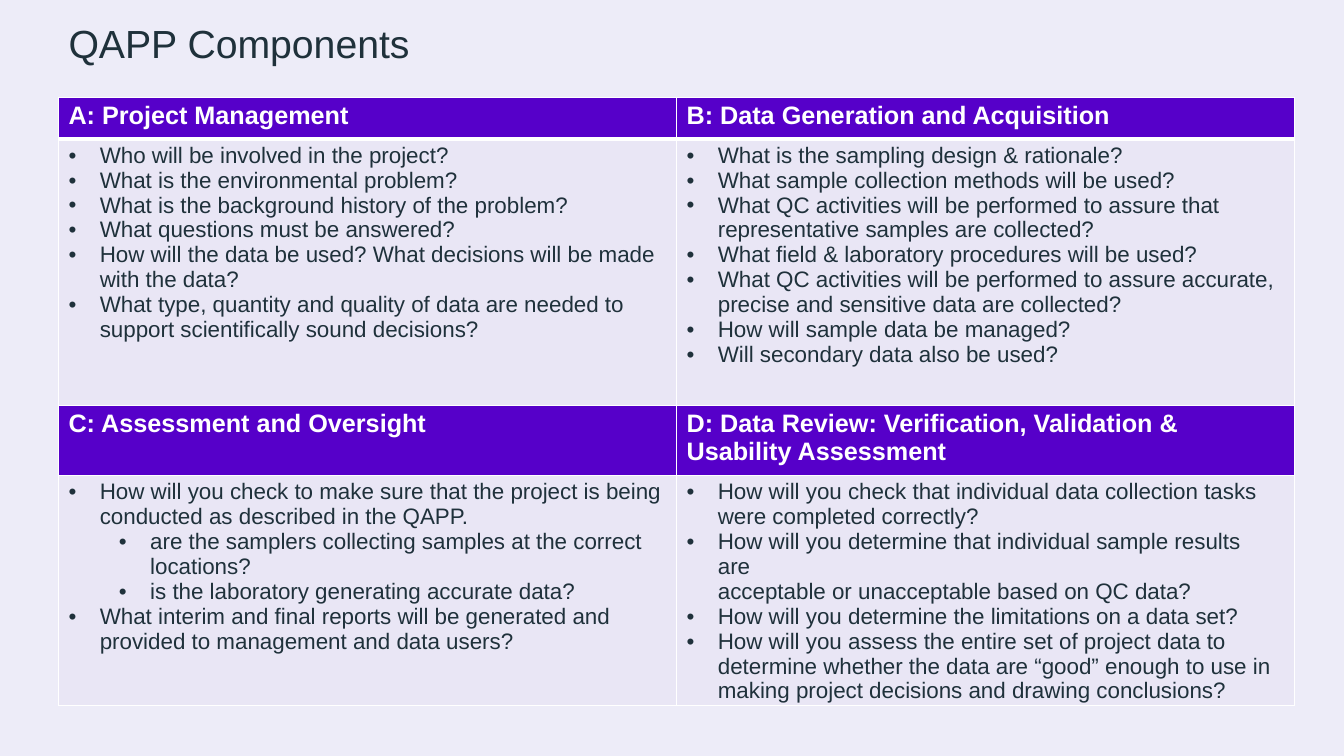
from lxml import etree
from pptx import Presentation
from pptx.dml.color import RGBColor
from pptx.enum.text import MSO_ANCHOR as Anchor, PP_ALIGN as Align
from pptx.oxml.ns import qn
from pptx.util import Inches, Pt

COLORS = {
    "page": "EDECF8",
    "header": "5600C9",
    "body": "E9E6F5",
    "ink": "1F313B",
    "white": "FFFFFF",
}
FONT = "Arial"
ROW_HEIGHTS = [0.41, 2.64, 0.7, 2.28]
HANGING = 0.31

# Each item is (kind, text); the kind selects indent and bullet.
ITEM, SUB, MORE, SUB_MORE = "item", "sub", "more", "sub_more"
KINDS = {  # level, left margin, bulleted
    ITEM: (0, 0.41, True),
    MORE: (0, 0.41, False),
    SUB: (1, 0.91, True),
    SUB_MORE: (0, 0.91, False),
}

SECTIONS = [
    [
        ("A: Project Management", [
            (ITEM, "Who will be involved in the project?"),
            (ITEM, "What is the environmental problem?"),
            (ITEM, "What is the background history of the problem?"),
            (ITEM, "What questions must be answered?"),
            (ITEM, "How will the data be used? What decisions will be made with the data?"),
            (ITEM, "What type, quantity and quality of data are needed to "
                   "support scientifically sound decisions?"),
        ]),
        ("B: Data Generation and Acquisition", [
            (ITEM, "What is the sampling design & rationale?"),
            (ITEM, "What sample collection methods will be used?"),
            (ITEM, "What QC activities will be performed to assure that"),
            (MORE, "representative samples are collected?"),
            (ITEM, "What field & laboratory procedures will be used?"),
            (ITEM, "What QC activities will be performed to assure accurate, "
                   "precise and sensitive data are collected?"),
            (ITEM, "How will sample data be managed?"),
            (ITEM, "Will secondary data also be used?"),
        ]),
    ],
    [
        ("C: Assessment and Oversight", [
            (ITEM, "How will you check to make sure that the project is being "
                   "conducted as described in the QAPP."),
            (SUB, "are the samplers collecting samples at the correct"),
            (SUB_MORE, "locations?"),
            (SUB, "is the laboratory generating accurate data?"),
            (ITEM, "What interim and final reports will be generated and "
                   "provided to management and data users?"),
        ]),
        ("D: Data Review: Verification, Validation & Usability Assessment", [
            (ITEM, "How will you check that individual data collection tasks "
                   "were completed correctly?"),
            (ITEM, "How will you determine that individual sample results"),
            (MORE, "are"),
            (MORE, "acceptable or unacceptable based on QC data?"),
            (ITEM, "How will you determine the limitations on a data set?"),
            (ITEM, "How will you assess the entire set of project data to "
                   "determine whether the data are “good” enough to use in "
                   "making project decisions and drawing conclusions?"),
        ]),
    ],
]


def color(name):
    return RGBColor.from_string(COLORS[name])


def add_span(para, text, size, ink, bold=False):
    span = para.add_run()
    span.text = text
    span.font.name = FONT
    span.font.size = Pt(size)
    span.font.bold = bold
    span.font.color.rgb = color(ink)


def indent(para, left, hanging=0):
    properties = para._p.get_or_add_pPr()
    properties.set("marL", str(Inches(left)))
    properties.set("indent", str(-Inches(hanging)))
    return properties


def style_cell(cell, fill, top_width, bottom_width, right_margin):
    cell.margin_left = cell.margin_bottom = 0
    cell.margin_right = Inches(right_margin)
    cell.margin_top = Inches(0.04)
    properties = cell._tc.get_or_add_tcPr()
    for side, width in zip("LRTB", (1, 1, top_width, bottom_width)):
        line = etree.SubElement(properties, qn("a:ln" + side), w=str(Pt(width)))
        solid = etree.SubElement(line, qn("a:solidFill"))
        etree.SubElement(solid, qn("a:srgbClr"), val=COLORS["white"])
    cell.fill.solid()
    cell.fill.fore_color.rgb = color(fill)


def fill_header(cell, heading, border):
    style_cell(cell, "header", 1, border, right_margin=0.3)
    para = cell.text_frame.paragraphs[0]
    indent(para, 0.1)
    add_span(para, heading, 18, "white", bold=True)


def fill_body(cell, items, border):
    style_cell(cell, "body", border, 1, right_margin=0)
    frame = cell.text_frame
    for index, (kind, text) in enumerate(items):
        para = frame.add_paragraph() if index else frame.paragraphs[0]
        level, left, bulleted = KINDS[kind]
        para.level = level
        properties = indent(para, left, HANGING if bulleted else 0)
        if bulleted:
            etree.SubElement(properties, qn("a:buFont"), typeface=FONT)
            etree.SubElement(properties, qn("a:buChar"), char="•")
        add_span(para, text, 16, "ink")


def place_title(page, left, top, width, height):
    title = page.shapes.title
    title.left, title.top = Inches(left), Inches(top)
    title.width, title.height = Inches(width), Inches(height)
    frame = title.text_frame
    frame.margin_left = frame.margin_right = frame.margin_bottom = 0
    frame.margin_top = Inches(0.04)
    frame.vertical_anchor = Anchor.TOP
    frame.word_wrap = False
    para = frame.paragraphs[0]
    para.alignment = Align.LEFT
    indent(para, 0.01)
    add_span(para, "QAPP Components", 28, "ink")


def add_components_table(page, left, top, width):
    table = page.shapes.add_table(
        len(ROW_HEIGHTS), 2, Inches(left), Inches(top),
        Inches(width), Inches(sum(ROW_HEIGHTS))).table
    table.first_row = table.horz_banding = False
    for row, height in zip(table.rows, ROW_HEIGHTS):
        row.height = Inches(height)
    for band, sections in enumerate(SECTIONS):
        border = 1 if band else 3
        for column, (heading, items) in enumerate(sections):
            fill_header(table.cell(2 * band, column), heading, border)
            fill_body(table.cell(2 * band + 1, column), items, border)


def main():
    deck = Presentation()
    deck.slide_width, deck.slide_height = Inches(13.33), Inches(7.5)
    page = deck.slides.add_slide(deck.slide_layouts[5])
    page.background.fill.solid()
    page.background.fill.fore_color.rgb = color("page")
    place_title(page, 0.67, 0.15, 3.42, 0.5)
    add_components_table(page, 0.58, 0.97, 12.26)
    deck.save("out.pptx")


if __name__ == "__main__":
    main()
